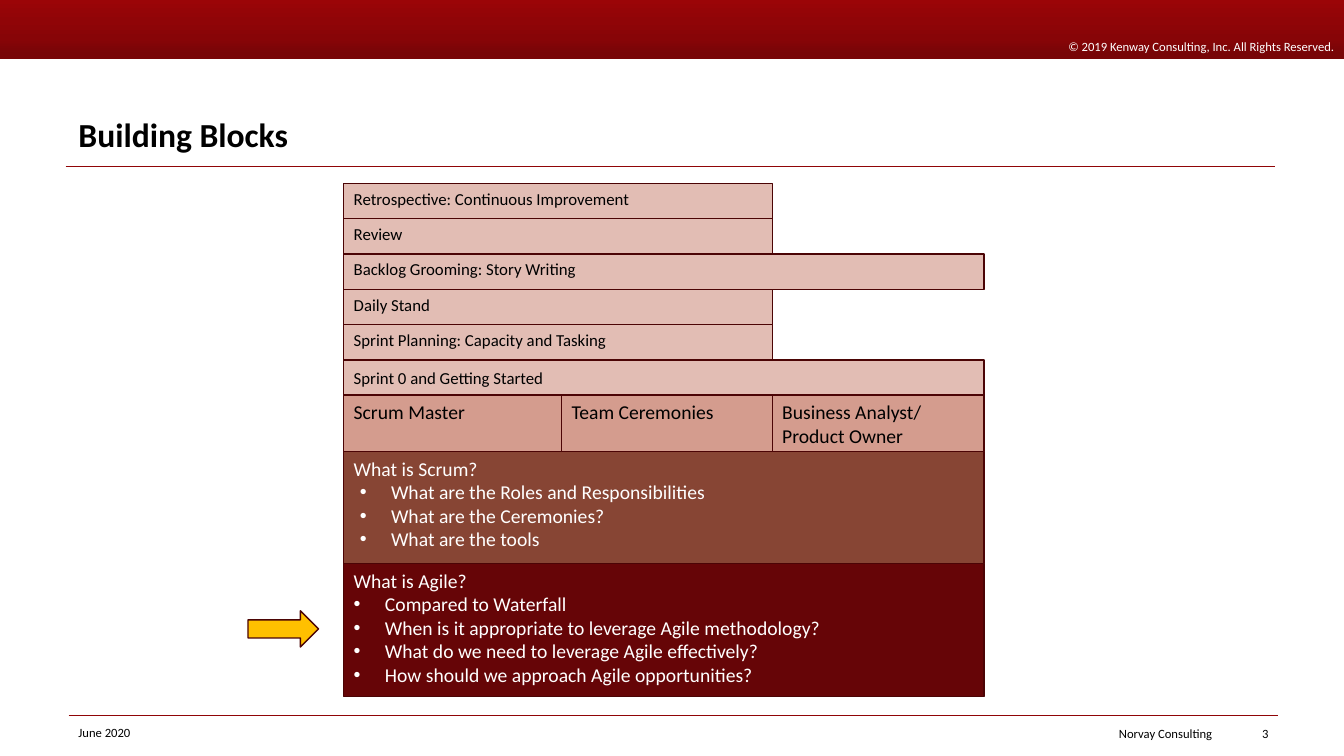
from lxml import etree
from pptx import Presentation
from pptx.dml.color import RGBColor
from pptx.enum.shapes import MSO_CONNECTOR, MSO_SHAPE
from pptx.enum.text import MSO_ANCHOR, PP_ALIGN
from pptx.oxml.ns import qn
from pptx.util import Inches, Pt

RECT, ARROW = MSO_SHAPE.RECTANGLE, MSO_SHAPE.RIGHT_ARROW
LINE = MSO_CONNECTOR.STRAIGHT
TOP, MID, LOW = MSO_ANCHOR.TOP, MSO_ANCHOR.MIDDLE, MSO_ANCHOR.BOTTOM
LEFT, RIGHT = PP_ALIGN.LEFT, PP_ALIGN.RIGHT

WIDE, HIGH = 13.33, 7.5
FONT = "Calibri"
HEX = {
    "black": "000000", "white": "FFFFFF", "rule": "900507", "edge": "4B0405",
    "agile": "660507", "scrum": "874534", "role": "D49C8E", "step": "E2BDB4",
    "gold": "FFC000",
}
FADE = [(0, "9B0507"), (35, "900507"), (65, "870507"), (91, "780507")]

COLS = [3.41, 5.57, 7.66, 9.76]
STEP = 0.35
ROWS = [1.82 + STEP * n for n in range(7)] + [4.48, 5.59, 6.91]

STEPS = [
    ("Retrospective: Continuous Improvement", 2, TOP),
    ("Review", 2, TOP),
    ("Backlog Grooming: Story Writing", 3, TOP),
    ("Daily Stand", 2, TOP),
    ("Sprint Planning: Capacity and Tasking", 2, TOP),
    ("Sprint 0 and Getting Started", 3, MID),
]
ROLES = ["Scrum Master", "Team Ceremonies", "Business Analyst/ Product Owner"]
SCRUM = [
    "What is Scrum?",
    "What are the Roles and Responsibilities",
    "What are the Ceremonies?",
    "What are the tools",
]
AGILE = [
    "What is Agile?",
    "Compared to Waterfall",
    "When is it appropriate to leverage Agile methodology?",
    "What do we need to leverage Agile effectively?",
    "How should we approach Agile opportunities?",
]


def color(name):
    return RGBColor.from_string(HEX[name])


def bullet(para, left):
    props = para._p.get_or_add_pPr()
    props.set("marL", str(Inches(left)))
    props.set("indent", str(Inches(-0.31)))
    font = etree.SubElement(props, qn("a:buFont"))
    font.set("typeface", "Arial")
    etree.SubElement(props, qn("a:buChar")).set("char", "•")


def write(shape, lines, size, ink="black", align=LEFT, anchor=TOP,
          bold=False, left=0.31, space=None):
    frame = shape.text_frame
    frame.word_wrap = True
    frame.vertical_anchor = anchor
    for n, line in enumerate(lines):
        para = frame.add_paragraph() if n else frame.paragraphs[0]
        if n:
            bullet(para, left)
        para.alignment = align
        if space:
            para.line_spacing = space
        run = para.add_run()
        run.text = line
        font = run.font
        font.name, font.size, font.bold = FONT, Pt(size), bold
        font.color.rgb = color(ink)


def label(slide, box, text, size, **style):
    shape = slide.shapes.add_textbox(*map(Inches, box))
    write(shape, [text], size, **style)


def solid(slide, kind, box, fill):
    shape = slide.shapes.add_shape(kind, *map(Inches, box))
    shape.shadow.inherit = False
    shape.fill.solid()
    shape.fill.fore_color.rgb = color(fill)
    shape.line.color.rgb = color("edge")
    shape.line.width = Pt(1)
    return shape


def block(slide, row, col, span, fill, lines, size, **style):
    box = (COLS[col], ROWS[row],
           COLS[col + span] - COLS[col], ROWS[row + 1] - ROWS[row])
    write(solid(slide, RECT, box, fill), lines, size, **style)


def rule(slide, left, top):
    line = slide.shapes.add_connector(
        LINE, *map(Inches, (left, top, left + 12, top)))
    line.line.color.rgb = color("rule")
    line.line.width = Pt(0.5)
    etree.SubElement(line._element.spPr, qn("a:effectLst"))


def banner(slide):
    band = slide.shapes.add_shape(RECT, 0, 0, Inches(WIDE), Inches(0.59))
    band.shadow.inherit = False
    band.line.fill.background()
    band.fill.gradient()
    band.fill.gradient_angle = 270
    stops = band._element.spPr.find(qn("a:gradFill")).find(qn("a:gsLst"))
    for stop in list(stops):
        stops.remove(stop)
    for pos, tone in FADE:
        stop = etree.SubElement(stops, qn("a:gs"))
        stop.set("pos", str(pos * 1000))
        etree.SubElement(stop, qn("a:srgbClr")).set("val", tone)
    write(band, ["© 2019 Kenway Consulting, Inc. All Rights Reserved."], 9,
          ink="white", align=RIGHT, anchor=LOW)


def footer(slide):
    rule(slide, 0.68, 7.1)
    top, high = 7.14, 0.28
    label(slide, (0.68, top, 3, high), "June 2020", 9)
    label(slide, (7.62, top, 4.5, high), "Norvay Consulting", 9,
          align=RIGHT, anchor=MID)
    label(slide, (12.13, top, 0.55, high), "3", 9, align=RIGHT, anchor=MID)


def main():
    deck = Presentation()
    deck.slide_width, deck.slide_height = Inches(WIDE), Inches(HIGH)
    slide = deck.slides.add_slide(deck.slide_layouts[6])
    banner(slide)
    rule(slide, 0.65, 1.65)
    label(slide, (0.68, 0.79, 12, 0.79), "Building Blocks", 24,
          anchor=LOW, bold=True, space=0.9)
    block(slide, 8, 0, 3, "agile", AGILE, 14, ink="white")
    block(slide, 7, 0, 3, "scrum", SCRUM, 14, ink="white", left=0.37)
    for col, role in enumerate(ROLES):
        block(slide, 6, col, 1, "role", [role], 14)
    for row, (text, span, anchor) in enumerate(STEPS):
        block(slide, row, 0, span, "step", [text], 12, anchor=anchor)
    solid(slide, ARROW, (2.46, 6.06, 0.7, 0.36), "gold")
    footer(slide)
    deck.save("out.pptx")


if __name__ == "__main__":
    main()
